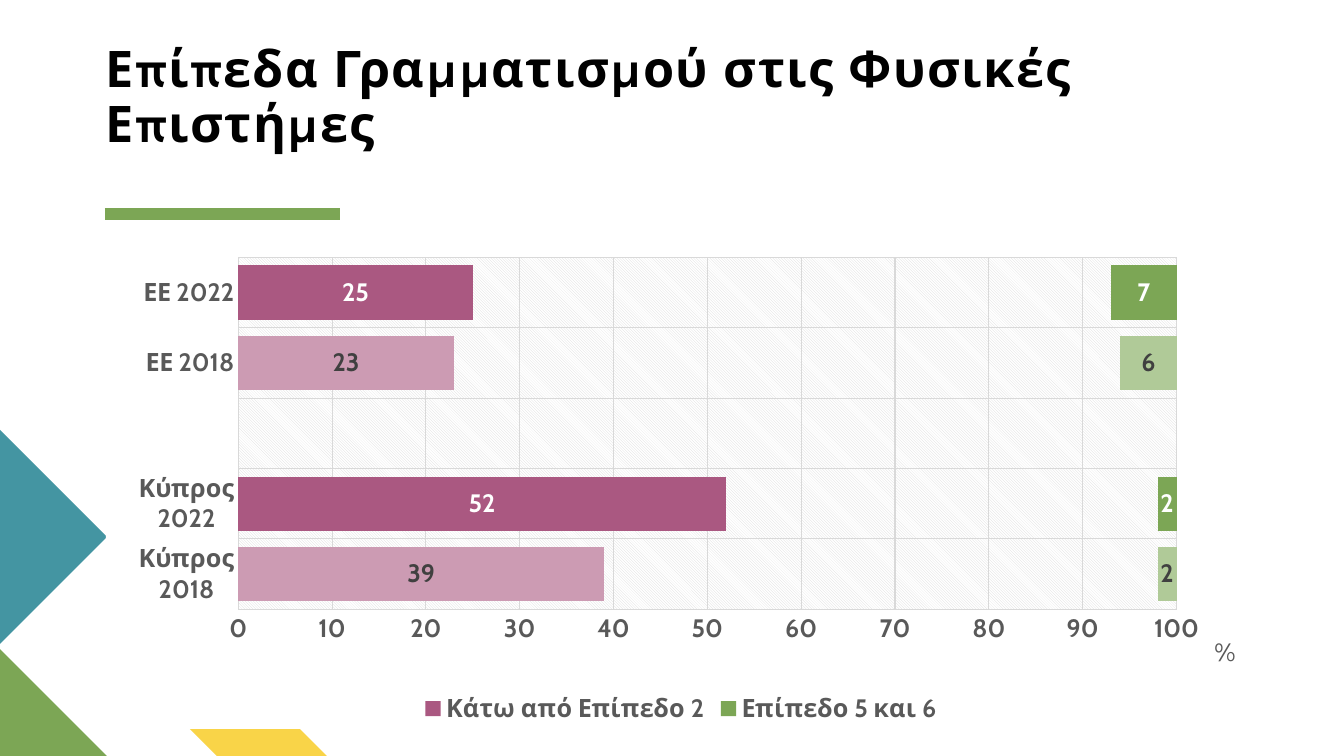
"""Build a slide comparing science literacy levels in Cyprus and the EU."""
from lxml import etree
from pptx import Presentation
from pptx.chart.data import CategoryChartData
from pptx.dml.color import RGBColor as Rgb
from pptx.enum.chart import XL_CHART_TYPE as ChartType
from pptx.enum.chart import XL_LEGEND_POSITION as LegendPosition
from pptx.enum.chart import XL_TICK_MARK as TickMark
from pptx.enum.shapes import MSO_CONNECTOR as Connector
from pptx.enum.text import MSO_ANCHOR as Anchor
from pptx.oxml import parse_xml
from pptx.oxml.ns import nsdecls, qn
from pptx.util import Pt

PX = 914400 / 100.8
THEME = {
    "teal": "4495A2", "green": "7CA655", "yellow": "F9D448", "plum": "AA5881",
    "pale_plum": "CC9BB3", "pale_green": "B0CA98", "black": "000000",
    "white": "FFFFFF", "label": "404040", "axis": "595959", "grid": "D9D9D9",
    "title_font": "Karla", "chart_font": "Cabin", "title_size": 36, "chart_size": 18,
}


def style_font(font, color, bold=True, face="chart"):
    font.name = THEME[f"{face}_font"]
    font.size = Pt(THEME[f"{face}_size"])
    font.bold = bold
    font.color.rgb = Rgb.from_string(THEME[color])


def place_part(part, **settings):
    for old_layout in part.findall(qn("c:layout")):
        part.remove(old_layout)
    values = "".join(f'<c:{name} val="{value}"/>' for name, value in settings.items())
    layout = parse_xml(f'<c:layout {nsdecls("c")}><c:manualLayout>{values}'
                       '</c:manualLayout></c:layout>')
    part.insert(1 if part.find(qn("c:tx")) is not None else 0, layout)


deck = Presentation()
deck.slide_width, deck.slide_height = round(1344 * PX), round(756 * PX)
page = deck.slides.add_slide(deck.slide_layouts[6])

corner_shapes = [
    ("yellow", [(327, 756), (217, 756), (107, 646), (162, 592)]),
    ("green", [(0, 649), (107, 756), (0, 756)]),
    ("teal", [(0, 430), (107, 537), (0, 644)]),
]
for color, points in corner_shapes:
    builder = page.shapes.build_freeform(*points[0], scale=PX)
    builder.add_line_segments(points[1:], close=True)
    corner = builder.convert_to_shape()
    corner.shadow.inherit = False
    corner.fill.solid()
    corner.fill.fore_color.rgb = Rgb.from_string(THEME[color])
    corner.line.fill.background()

rule = page.shapes.add_connector(
    Connector.STRAIGHT, *[round(length * PX) for length in (105, 214, 340, 214)])
rule.line.color.rgb = Rgb.from_string(THEME["green"])
rule.line.width = Pt(8)
etree.SubElement(rule.element.spPr, qn("a:effectLst"))

title_box = page.shapes.add_textbox(
    *[round(length * PX) for length in (106, 86, 1150, 67)])
frame = title_box.text_frame
frame.word_wrap = True
frame.vertical_anchor = Anchor.BOTTOM
frame.margin_left = frame.margin_top = frame.margin_right = frame.margin_bottom = 0
frame.text = "Επίπεδα Γραμματισμού στις Φυσικές Επιστήμες"
para = frame.paragraphs[0]
para.line_spacing = 0.9
span = para.runs[0]
style_font(span.font, "black", face="title")
span.font.element.set("spc", "100") if hasattr(span.font, "element") else \
    para.runs[0].text and title_box.element.xpath(".//a:rPr")[0].set("spc", "100")

data = CategoryChartData(number_format="#,##0")
data.categories = ["Κύπρος 2018", "Κύπρος 2022", "", "ΕΕ 2018", "ΕΕ 2022"]
data.add_series("Κάτω από Επίπεδο 2", [39, 52, None, 23, 25])
data.add_series("Series 2", [59, 46, None, 71, 68])
data.add_series("Επίπεδο 5 και 6", [2, 2, None, 6, 7])
chart = page.shapes.add_chart(
    ChartType.BAR_STACKED,
    *[round(length * PX) for length in (106, 232, 1150, 497)], data).chart
chart.has_title = False
style_font(chart.font, "axis")

plot = chart.plots[0]
plot.gap_width = 30
plot.overlap = 95
plot.vary_by_categories = False
level_colors = [("plum", "pale_plum"), None, ("green", "pale_green")]
for series, colors in zip(plot.series, level_colors):
    series.invert_if_negative = False
    if colors is None:
        series.format.fill.background()
        continue
    strong, pale = colors
    series.format.fill.solid()
    series.format.fill.fore_color.rgb = Rgb.from_string(THEME[strong])
    labels = series.data_labels
    labels.show_value = True
    labels.number_format = "#,##0"
    labels.number_format_is_linked = False
    style_font(labels.font, "label")
    for index_2018 in (0, 3):
        fill = series.points[index_2018].format.fill
        fill.solid()
        fill.fore_color.rgb = Rgb.from_string(THEME[pale])
        style_font(series.points[index_2018 + 1].data_label.font, "white")

for axis in (chart.category_axis, chart.value_axis):
    axis.has_major_gridlines = True
    axis.major_tick_mark = axis.minor_tick_mark = TickMark.NONE
    style_font(axis.tick_labels.font, "axis")
    for line in (axis.format.line, axis.major_gridlines.format.line):
        line.color.rgb = Rgb.from_string(THEME["grid"])
        line.width = Pt(0.75)

percent_axis = chart.value_axis
percent_axis.minimum_scale, percent_axis.maximum_scale = 0, 100
percent_axis.major_unit = 10
percent_axis.tick_labels.number_format = "#,##0"
percent_axis.tick_labels.number_format_is_linked = False
unit_para = percent_axis.axis_title.text_frame.paragraphs[0]
unit_para.text = "%"
style_font(unit_para.runs[0].font, "axis", bold=False)

chart.has_legend = True
chart.legend.position = LegendPosition.BOTTOM
chart.legend.include_in_layout = False
style_font(chart.legend.font, "axis")
chart.element.xpath("c:chart/c:legend/c:legendPos")[0].addnext(parse_xml(
    f'<c:legendEntry {nsdecls("c")}><c:idx val="1"/><c:delete val="1"/></c:legendEntry>'))

plot_area = chart.element.xpath("c:chart/c:plotArea")[0]
place_part(plot_area, layoutTarget="inner", xMode="edge", yMode="edge",
           x=0.115, y=0.051, w=0.816, h=0.708)
place_part(plot_area.xpath("c:valAx/c:title")[0], xMode="edge", yMode="edge", x=0.96, y=0.8)
plot_area.append(parse_xml(
    f'<c:spPr {nsdecls("c", "a")}><a:pattFill prst="ltDnDiag">'
    f'<a:fgClr><a:srgbClr val="{THEME["grid"]}"/></a:fgClr>'
    f'<a:bgClr><a:srgbClr val="{THEME["white"]}"/></a:bgClr></a:pattFill></c:spPr>'))
chart.element.xpath("c:chart")[0].addnext(parse_xml(
    f'<c:spPr {nsdecls("c", "a")}><a:solidFill><a:srgbClr val="{THEME["white"]}"/>'
    '</a:solidFill><a:ln><a:noFill/></a:ln></c:spPr>'))

deck.save("out.pptx")
